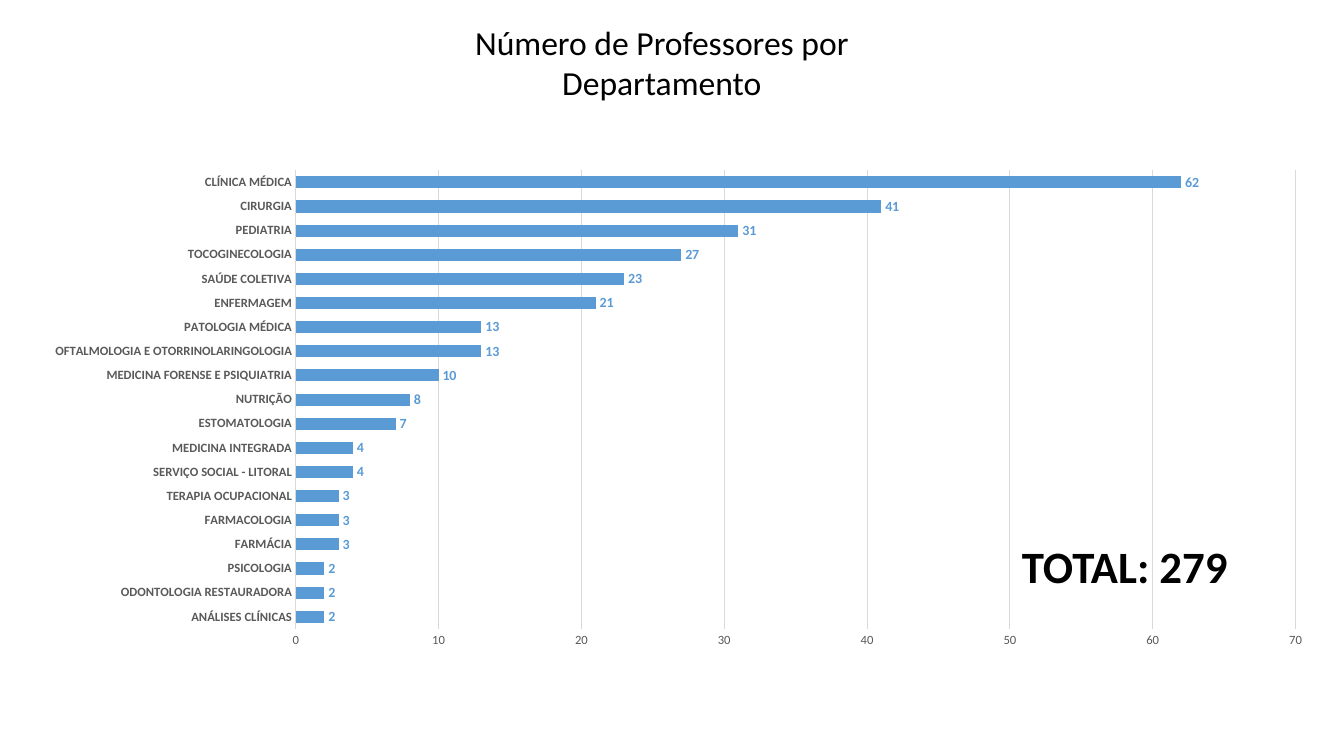
from lxml import etree
from pptx import Presentation
from pptx import util as u
from pptx.chart import data as cd
from pptx.dml.color import RGBColor
from pptx.enum import chart as ch, text as tx
from pptx.oxml import parse_xml

FACE = "Calibri"
BLUE, GREY, RULE, BLACK = "5B9BD5", "595959", "D9D9D9", "000000"
NS = ('xmlns:c="http://schemas.openxmlformats.org/drawingml/2006/chart" '
      'xmlns:a="http://schemas.openxmlformats.org/drawingml/2006/main"')

STAFF = [
    ("ANÁLISES CLÍNICAS", 2), ("ODONTOLOGIA RESTAURADORA", 2),
    ("PSICOLOGIA", 2), ("FARMÁCIA", 3), ("FARMACOLOGIA", 3),
    ("TERAPIA OCUPACIONAL", 3), ("SERVIÇO SOCIAL - LITORAL", 4),
    ("MEDICINA INTEGRADA", 4), ("ESTOMATOLOGIA", 7), ("NUTRIÇÃO", 8),
    ("MEDICINA FORENSE E PSIQUIATRIA", 10),
    ("OFTALMOLOGIA E OTORRINOLARINGOLOGIA", 13), ("PATOLOGIA MÉDICA", 13),
    ("ENFERMAGEM", 21), ("SAÚDE COLETIVA", 23), ("TOCOGINECOLOGIA", 27),
    ("PEDIATRIA", 31), ("CIRURGIA", 41), ("CLÍNICA MÉDICA", 62),
]


def rgb(code):
    return RGBColor.from_string(code)


def put(obj, vals):
    for key, val in vals.items():
        setattr(obj, key, val)


def style(font, size, color, bold=False):
    put(font, {"name": FACE, "size": u.Pt(size), "bold": bold})
    font.color.rgb = rgb(color)


def label(slide, box, words, size, bold=False):
    frame = slide.shapes.add_textbox(*map(u.Pt, box)).text_frame
    frame.word_wrap = True
    para = frame.paragraphs[0]
    put(para, {"text": words, "alignment": tx.PP_ALIGN.CENTER})
    style(para.runs[0].font, size, BLACK, bold)


def axis(item, bold):
    put(item, {"major_tick_mark": ch.XL_TICK_MARK.NONE,
               "minor_tick_mark": ch.XL_TICK_MARK.NONE})
    item.format.line.fill.background()
    style(item.tick_labels.font, 9, GREY, bold)


def frame(chart, **area):
    """Fix the inner plot area and leave the chart background clear."""
    parts = "".join(f'<c:{k} val="{v}"/>' for k, v in area.items())
    plot = chart._chartSpace.chart.plotArea
    for old in plot.findall("{*}layout"):
        plot.remove(old)
    plot.insert(0, parse_xml(
        f'<c:layout {NS}><c:manualLayout><c:layoutTarget val="inner"/>'
        f'<c:xMode val="edge"/><c:yMode val="edge"/>{parts}'
        '</c:manualLayout></c:layout>'))
    chart._chartSpace.chart.addnext(parse_xml(
        f'<c:spPr {NS}><a:noFill/><a:ln><a:noFill/></a:ln></c:spPr>'))


def bars(slide, box, rows):
    data = cd.CategoryChartData()
    names, counts = zip(*rows)
    data.categories = names
    data.add_series("Series 1", counts)
    chart = slide.shapes.add_chart(
        ch.XL_CHART_TYPE.BAR_CLUSTERED, *map(u.Pt, box), data).chart
    put(chart, {"has_legend": False, "has_title": False})
    style(chart.font, 10, BLACK)

    # Axes and grid
    axis(chart.category_axis, True)
    scale = chart.value_axis
    axis(scale, False)
    put(scale, {"minimum_scale": 0, "maximum_scale": 70, "major_unit": 10,
                "has_major_gridlines": True})
    grid = scale.major_gridlines.format.line
    grid.width = u.Pt(0.75)
    grid.color.rgb = rgb(RULE)

    # Bars and their values
    plot = chart.plots[0]
    put(plot, {"gap_width": 100, "vary_by_categories": False,
               "has_data_labels": True})
    fill = plot.series[0].format.fill
    fill.solid()
    fill.fore_color.rgb = rgb(BLUE)
    put(plot.data_labels, {"show_value": True,
                           "position": ch.XL_LABEL_POSITION.OUTSIDE_END})
    style(plot.data_labels.font, 10, BLUE, True)
    frame(chart, x=0.21, y=0.02, w=0.77, h=0.91)


def main():
    deck = Presentation()
    put(deck, {"slide_width": u.Pt(960), "slide_height": u.Pt(540)})
    slide = deck.slides.add_slide(deck.slide_layouts[6])
    # Title and total
    label(slide, (260, 12, 425.5, 58), "Número de Professores por Departamento", 24)
    label(slide, (685.5, 381, 236, 46), "TOTAL: 279", 32, True)
    # Teachers in each department
    bars(slide, (16.5, 114.5, 927.5, 360), STAFF)
    deck.save("out.pptx")


if __name__ == "__main__":
    main()
